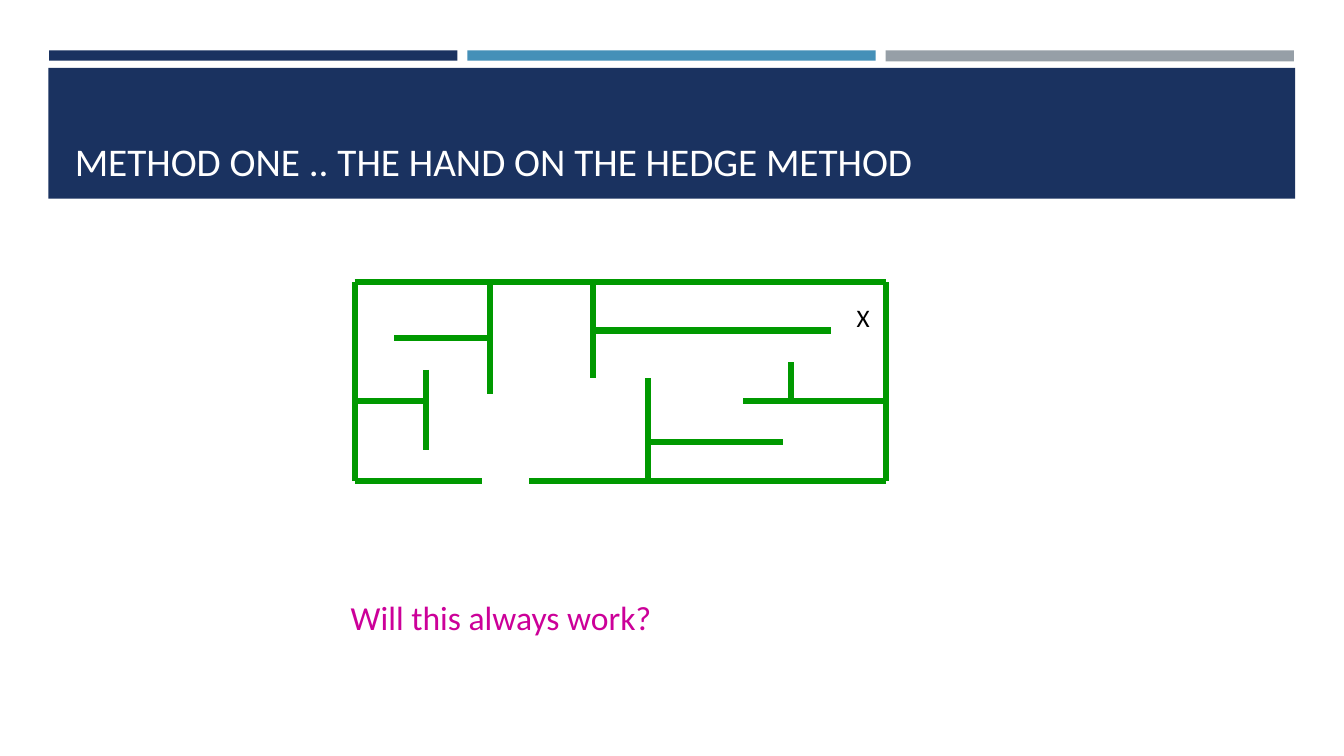
from dataclasses import dataclass

from lxml.etree import SubElement
from pptx import Presentation
from pptx.dml.color import RGBColor
from pptx.enum.shapes import MSO_CONNECTOR, MSO_SHAPE
from pptx.enum.text import MSO_ANCHOR, MSO_AUTO_SIZE, PP_ALIGN
from pptx.oxml.ns import qn
from pptx.shapes.base import BaseShape
from pptx.shapes.group import GroupShape
from pptx.slide import Slide
from pptx.util import Cm, Pt

COLORS = {
    "navy": "1A3260",
    "blue": "4590B8",
    "gray": "969FA7",
    "hedge": "009900",
    "question": "CC0099",
    "black": "000000",
    "white": "FFFFFF",
}
FONT = "Calibri"
LEFT, RIGHT, TOP, BOTTOM = 8.94, 22.33, 7.11, 12.12
BAR_LEFT, BAR_STEP = 1.24, 10.54


@dataclass(frozen=True)
class Block:
    left: float
    top: float
    width: float
    height: float
    color: str


@dataclass(frozen=True)
class Hedge:
    start_x: float
    start_y: float
    end_x: float
    end_y: float


BLOCKS = [
    Block(BAR_LEFT + index * BAR_STEP, 1.27, 10.29, height, color)
    for index, (color, height) in enumerate(
        [("navy", 0.26), ("blue", 0.26), ("gray", 0.28)]
    )
] + [Block(1.22, 1.71, 31.42, 3.3, "navy")]

HEDGES = [
    Hedge(12.14, BOTTOM, LEFT, BOTTOM),
    Hedge(LEFT, BOTTOM, LEFT, TOP),
    Hedge(LEFT, TOP, RIGHT, TOP),
    Hedge(RIGHT, TOP, RIGHT, BOTTOM),
    Hedge(RIGHT, BOTTOM, 13.34, BOTTOM),
    Hedge(16.33, BOTTOM, 16.33, 9.53),
    Hedge(12.34, TOP, 12.34, 9.93),
    Hedge(RIGHT, 10.11, 18.72, 10.11),
    Hedge(14.94, TOP, 14.94, 9.53),
    Hedge(LEFT, 10.11, 10.74, 10.11),
    Hedge(12.34, 8.51, 9.93, 8.51),
    Hedge(14.94, 8.33, 20.93, 8.33),
    Hedge(16.33, 11.13, 19.74, 11.13),
    Hedge(19.94, 10.11, 19.94, 9.12),
    Hedge(10.74, 9.32, 10.74, 11.33),
]


def color_of(name: str) -> RGBColor:
    return RGBColor.from_string(COLORS[name])


def place(shape: BaseShape, left: float, top: float, width: float, height: float) -> None:
    shape.left, shape.top = Cm(left), Cm(top)
    shape.width, shape.height = Cm(width), Cm(height)


def write_text(
    shape: BaseShape,
    text: str,
    *,
    size: float,
    color: str,
    anchor: MSO_ANCHOR = MSO_ANCHOR.TOP,
    auto_size: MSO_AUTO_SIZE = MSO_AUTO_SIZE.SHAPE_TO_FIT_TEXT,
) -> None:
    frame = shape.text_frame
    frame.word_wrap = True
    frame.auto_size = auto_size
    frame.vertical_anchor = anchor
    paragraph = frame.paragraphs[0]
    paragraph.alignment = PP_ALIGN.LEFT
    run = paragraph.add_run()
    run.text = text
    run.font.name = FONT
    run.font.size = Pt(size)
    run.font.color.rgb = color_of(color)


def draw_block(slide: Slide, block: Block) -> None:
    shape = slide.shapes.add_shape(
        MSO_SHAPE.RECTANGLE,
        Cm(block.left), Cm(block.top), Cm(block.width), Cm(block.height),
    )
    shape.shadow.inherit = False
    shape.fill.solid()
    shape.fill.fore_color.rgb = color_of(block.color)
    shape.line.fill.background()


def draw_hedge(maze: GroupShape, hedge: Hedge) -> None:
    connector = maze.shapes.add_connector(
        MSO_CONNECTOR.STRAIGHT,
        Cm(hedge.start_x), Cm(hedge.start_y), Cm(hedge.end_x), Cm(hedge.end_y),
    )
    connector.line.color.rgb = color_of("hedge")
    connector.line.width = Pt(4.5)
    SubElement(connector._element.spPr, qn("a:effectLst"))


def main() -> None:
    presentation = Presentation()
    presentation.slide_width = Cm(33.87)
    presentation.slide_height = Cm(19.05)
    slide = presentation.slides.add_slide(presentation.slide_layouts[5])

    for block in BLOCKS:
        draw_block(slide, block)

    maze = slide.shapes.add_group_shape()
    for hedge in HEDGES:
        draw_hedge(maze, hedge)
    goal = maze.shapes.add_textbox(Cm(21.34), Cm(7.49), Cm(0.99), Cm(1.02))
    write_text(goal, "X", size=18, color="black")

    title = slide.shapes.title
    slide.shapes._spTree.append(title._element)
    place(title, 1.63, 1.96, 30.63, 2.82)
    write_text(
        title, "METHOD ONE .. THE HAND ON THE HEDGE METHOD",
        size=28, color="white", anchor=MSO_ANCHOR.BOTTOM, auto_size=MSO_AUTO_SIZE.NONE,
    )

    question = slide.shapes.add_textbox(Cm(8.59), Cm(14.91), Cm(16.71), Cm(1.27))
    write_text(question, "Will this always work?", size=24, color="question")

    presentation.save("out.pptx")


if __name__ == "__main__":
    main()
